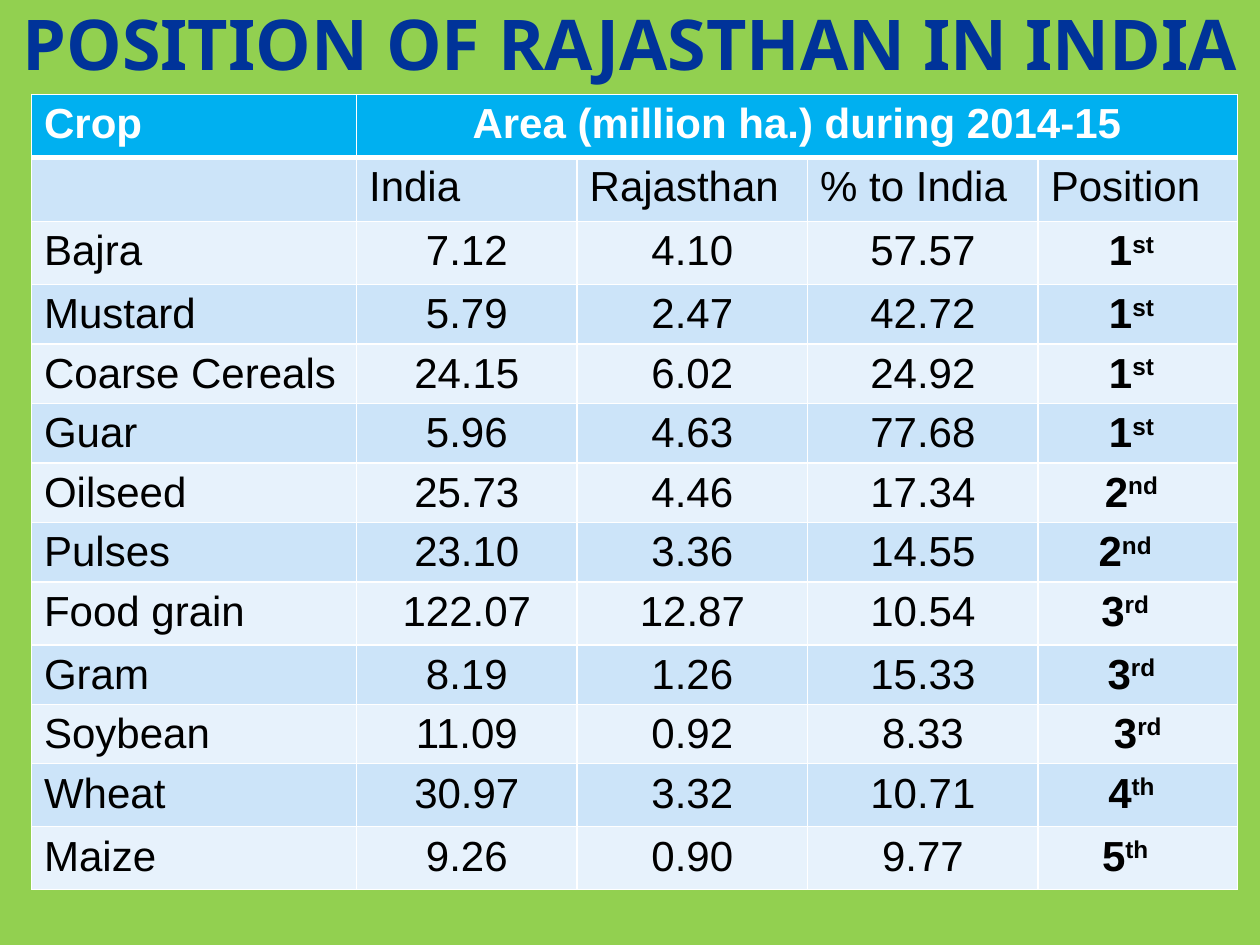
from lxml import etree
from pptx import Presentation
from pptx.dml.color import RGBColor
from pptx.enum.text import MSO_ANCHOR, MSO_AUTO_SIZE, PP_ALIGN
from pptx.oxml.ns import qn
from pptx.util import Inches, Pt

LEFT, CENTER = PP_ALIGN.LEFT, PP_ALIGN.CENTER
BOTTOM = MSO_ANCHOR.BOTTOM
NO_FIT = MSO_AUTO_SIZE.NONE

TITLE = "POSITION OF RAJASTHAN IN INDIA"
HEAD = ["Crop", "Area (million ha.) during 2014-15", "", "", ""]
SUBHEAD = ["", "India", "Rajasthan", "% to India", "Position"]
CROPS = [
    ["Bajra", "7.12", "4.10", "57.57", "1st"],
    ["Mustard", "5.79", "2.47", "42.72", "1st"],
    ["Coarse Cereals", "24.15", "6.02", "24.92", "1st"],
    ["Guar", "5.96", "4.63", "77.68", "1st"],
    ["Oilseed", "25.73", "4.46", "17.34", "2nd"],
    ["Pulses", "23.10", "3.36", "14.55", "2nd"],
    ["Food grain", "122.07", "12.87", "10.54", "3rd"],
    ["Gram", "8.19", "1.26", "15.33", "3rd"],
    ["Soybean", "11.09", "0.92", "8.33", "3rd"],
    ["Wheat", "30.97", "3.32", "10.71", "4th"],
    ["Maize", "9.26", "0.90", "9.77", "5th"],
]
ROWS = [HEAD, SUBHEAD] + CROPS
WIDTHS = [2.58, 1.75, 1.83, 1.83, 1.58]
TALL = {"Crop", "Bajra", "Food grain", "Wheat", "Maize"}
# Extra right inset that moves a rank left of the column centre
INSETS = {"Pulses": 0.2, "Food grain": 0.2, "Maize": 0.2, "Soybean": 0}
HEAD_FILL, BANDS = "00B0F0", ["E7F2FC", "CCE4F9"]


def color(code):
    return RGBColor.from_string(code)


def style(run, size, font, code, bold):
    run.font.size = Pt(size)
    run.font.name = font
    run.font.color.rgb = color(code)
    run.font.bold = bold


def add_borders(cell, row):
    props = cell._tc.get_or_add_tcPr()
    thick = {0: "lnB", 1: "lnT"}.get(row)
    for side in ("lnL", "lnR", "lnT", "lnB"):
        width = Pt(3 if side == thick else 1)
        line = etree.SubElement(props, qn("a:" + side), w=str(width))
        fill = etree.SubElement(line, qn("a:solidFill"))
        etree.SubElement(fill, qn("a:srgbClr"), val="FFFFFF")


def fill_cell(cell, text, row, col):
    add_borders(cell, row)
    cell.fill.solid()
    cell.fill.fore_color.rgb = color(HEAD_FILL if row == 0 else BANDS[row % 2])
    para = cell.text_frame.paragraphs[0]
    para.alignment = LEFT if col == 0 or row == 1 else CENTER
    para.font.size = Pt(24)
    rank = row > 1 and col == 4
    for part in [text[:1], text[1:]] if rank else [text]:
        if part:
            run = para.add_run()
            run.text = part
            style(run, 24, "Arial", "000000" if row else "FFFFFF",
                  row == 0 or rank)
    if rank:
        run._r.get_or_add_rPr().set("baseline", "30000")
        cell.margin_right = Inches(0.1 + INSETS.get(ROWS[row][0], 0.1))


def add_title(slide):
    title = slide.shapes.title
    title.left = title.top = 0
    title.width, title.height = Inches(10), Inches(0.67)
    frame = title.text_frame
    frame.text = TITLE
    frame.auto_size = NO_FIT
    frame.vertical_anchor = BOTTOM
    frame.margin_left = frame.margin_right = Inches(0.05)
    frame.margin_top = frame.margin_bottom = 0
    para = frame.paragraphs[0]
    para.alignment = CENTER
    style(para.runs[0], 40, "Noto Sans", "003399", True)


def add_crops(slide):
    heights = [0.5 if row[0] in TALL else 0.47 for row in ROWS]
    table = slide.shapes.add_table(
        len(ROWS), len(WIDTHS), Inches(0.25), Inches(0.75),
        Inches(sum(WIDTHS)), Inches(sum(heights))).table
    for col, width in zip(table.columns, WIDTHS):
        col.width = Inches(width)
    for row, height in zip(table.rows, heights):
        row.height = Inches(height)
    table.cell(0, 1).merge(table.cell(0, 4))
    for r, row in enumerate(ROWS):
        for c, text in enumerate(row):
            fill_cell(table.cell(r, c), text, r, c)


def main():
    deck = Presentation()
    deck.slide_width, deck.slide_height = Inches(10), Inches(7.5)
    slide = deck.slides.add_slide(deck.slide_layouts[5])
    slide.background.fill.solid()
    slide.background.fill.fore_color.rgb = color("92D050")
    add_title(slide)
    add_crops(slide)
    deck.save("out.pptx")


if __name__ == "__main__":
    main()
